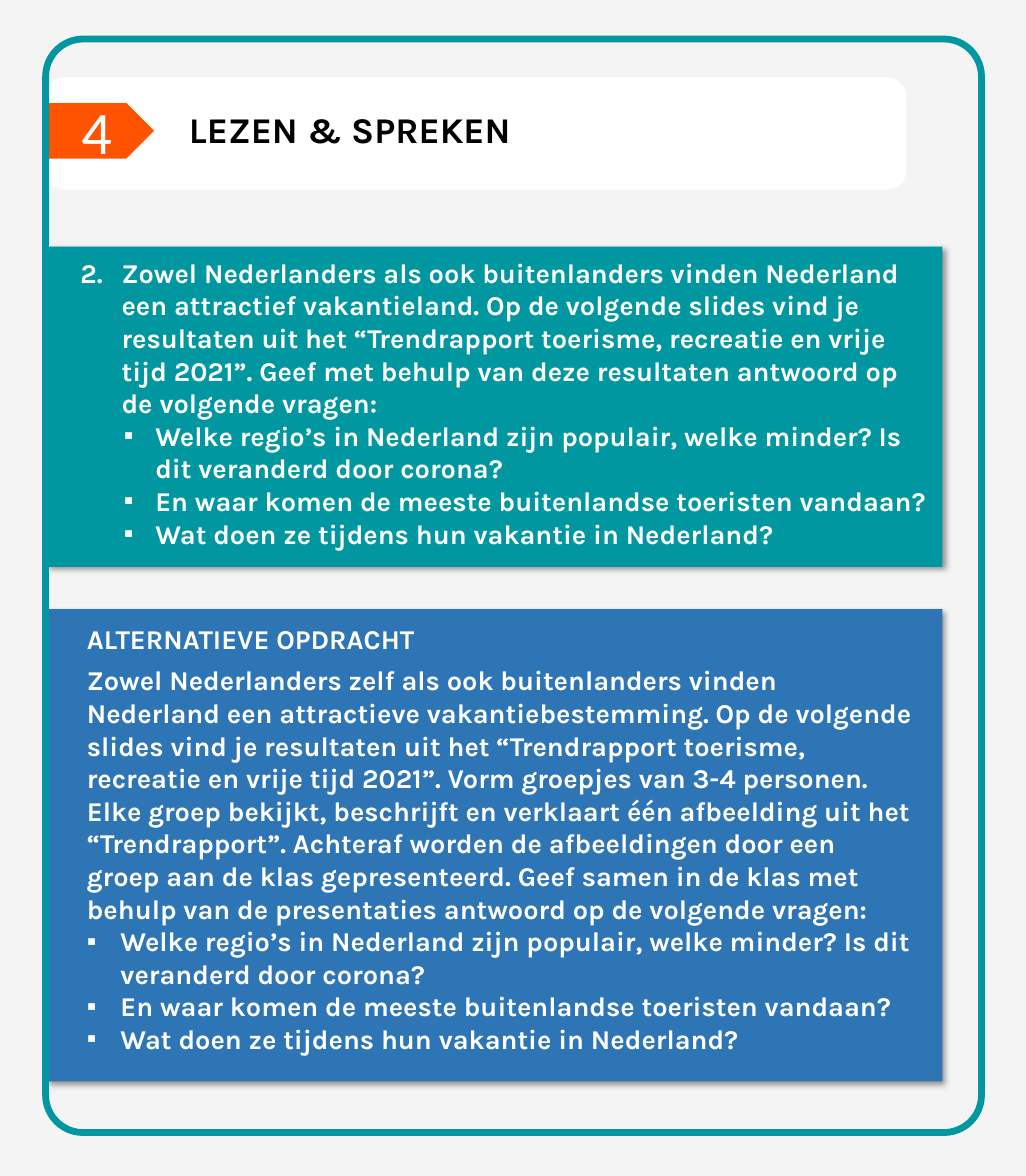
from lxml import etree
from pptx import Presentation
from pptx.dml.color import RGBColor
from pptx.enum.shapes import MSO_SHAPE
from pptx.enum.text import MSO_ANCHOR, MSO_AUTO_SIZE, PP_ALIGN
from pptx.oxml import parse_xml
from pptx.oxml.ns import nsdecls, qn
from pptx.util import Inches, Pt

RECTANGLE = MSO_SHAPE.RECTANGLE
ROUNDED = MSO_SHAPE.ROUNDED_RECTANGLE
PENTAGON = MSO_SHAPE.PENTAGON
TOP, MIDDLE = MSO_ANCHOR.TOP, MSO_ANCHOR.MIDDLE
NO_AUTOFIT = MSO_AUTO_SIZE.NONE
LEFT = PP_ALIGN.LEFT
TWO_CONTENT = 3

TEAL, BLUE, ORANGE = "0097A1", "2E75B6", "FF5300"
WHITE, BLACK, GREY = "FFFFFF", "000000", "F4F4F4"
HEADING = {"name": "Karla", "size": Pt(24), "bold": True}
BODY = {"name": "Karla", "size": Pt(18), "bold": True}
NUMBER = {"name": "Calibri", "size": Pt(40), "bold": False}

QUESTIONS = [
    "Welke regio’s in Nederland zijn populair, welke minder? Is dit veranderd door corona?",
    "En waar komen de meeste buitenlandse toeristen vandaan?",
    "Wat doen ze tijdens hun vakantie in Nederland?",
]
TASK = (
    "Zowel Nederlanders als ook buitenlanders vinden Nederland een attractief "
    "vakantieland. Op de volgende slides vind je resultaten uit het “Trendrapport "
    "toerisme, recreatie en vrije tijd 2021”. Geef met behulp van deze resultaten "
    "antwoord op de volgende vragen:"
)
ALTERNATIVE = (
    "Zowel Nederlanders zelf als ook buitenlanders vinden Nederland een attractieve "
    "vakantiebestemming. Op de volgende slides vind je resultaten uit het "
    "“Trendrapport toerisme, recreatie en vrije tijd 2021”. Vorm groepjes van 3-4 "
    "personen. Elke groep bekijkt, beschrijft en verklaart één afbeelding uit het "
    "“Trendrapport”. Achteraf worden de afbeeldingen door een groep aan de klas "
    "gepresenteerd. Geef samen in de klas met behulp van de presentaties antwoord "
    "op de volgende vragen:"
)


def color(value):
    return RGBColor.from_string(value)


def add_box(page, kind, area, fill=None, line=None, width=1):
    box = page.shapes.add_shape(kind, *map(Inches, area))
    box.shadow.inherit = False
    if fill:
        box.fill.solid()
        box.fill.fore_color.rgb = color(fill)
    else:
        box.fill.background()
    if line:
        box.line.color.rgb = color(line)
        box.line.width = Pt(width)
    else:
        box.line.fill.background()
    return box


def add_shadow(box):
    effects = box.element.spPr.find(qn("a:effectLst"))
    effects.append(parse_xml(
        f'<a:outerShdw {nsdecls("a")} blurRad="{Pt(4)}" dist="{Pt(3)}" dir="2700000" '
        'algn="tl" rotWithShape="0"><a:srgbClr val="000000"><a:alpha val="40000"/>'
        '</a:srgbClr></a:outerShdw>'))


def place(holder, area, anchor):
    """Move a placeholder to an area and bring it to the front."""
    holder.left, holder.top, holder.width, holder.height = map(Inches, area)
    frame = holder.text_frame
    settings = {"word_wrap": True, "auto_size": NO_AUTOFIT, "vertical_anchor": anchor}
    for name, value in settings.items():
        setattr(frame, name, value)
    holder.element.getparent().append(holder.element)
    return frame


def write(para, text, style, ink):
    para.alignment = LEFT
    span = para.add_run()
    span.text = text
    for name, value in style.items():
        setattr(span.font, name, value)
    span.font.color.rgb = color(ink)


def set_marker(para, tag, indent=0, hanging=0, **values):
    props = para._p.get_or_add_pPr()
    props.set("marL", str(Inches(indent)))
    props.set("indent", str(-Inches(hanging)))
    marker = etree.SubElement(props, qn(f"a:{tag}"))
    for name, value in values.items():
        marker.set(name, value)


def fill_list(frame, items):
    """Write (text, space before, marker) items as paragraphs."""
    for index, (text, space, marker) in enumerate(items):
        para = frame.paragraphs[0] if index == 0 else frame.add_paragraph()
        set_marker(para, **marker)
        para.space_before = Pt(space)
        write(para, text, BODY, WHITE)


def question_items(indent, hanging):
    marker = {"tag": "buChar", "indent": indent, "hanging": hanging, "char": "▪"}
    return [(question, 0, marker) for question in QUESTIONS]


def header(page, left, top, width, height):
    add_box(page, ROUNDED, (left, top, width, height), WHITE, WHITE)
    # Numbered arrow
    arrow = add_box(page, PENTAGON, (left, top + 0.23, 1, 0.51), ORANGE)
    frame = arrow.text_frame
    margins = {"margin_left": 0.33, "margin_right": 0, "margin_top": 0, "margin_bottom": 0}
    for name, value in margins.items():
        setattr(frame, name, Inches(value))
    frame.vertical_anchor = MIDDLE
    write(frame.paragraphs[0], "4", NUMBER, WHITE)
    # Title
    frame = place(page.shapes.title, (left + 1.22, top + 0.22, 6.21, 0.5), MIDDLE)
    write(frame.paragraphs[0], "LEZEN & SPREKEN", HEADING, BLACK)


def panel(page, area, fill, holder, text_area, items):
    left, top, width, height = area
    add_shadow(add_box(page, RECTANGLE, area, fill))
    dx, dy, text_width, text_height = text_area
    frame = place(holder, (left + dx, top + dy, text_width, text_height), TOP)
    fill_list(frame, items)


def build_page(deck):
    page = deck.slides.add_slide(deck.slide_layouts[TWO_CONTENT])
    page.background.fill.solid()
    page.background.fill.fore_color.rgb = color(GREY)
    task_holder, alternative_holder = page.placeholders[1], page.placeholders[2]

    header(page, 0.42, 0.72, 7.92, 1.02)

    # Main task
    number = {"tag": "buAutoNum", "indent": 0.38, "hanging": 0.38,
              "type": "arabicPeriod", "startAt": "2"}
    panel(page, (0.43, 2.27, 8.25, 2.95), TEAL, task_holder, (0.21, 0.04, 8.02, 2.83),
          [(TASK, 0, number)] + question_items(0.69, 0.29))

    # Alternative task
    plain = {"tag": "buNone"}
    panel(page, (0.43, 5.61, 8.25, 4.35), BLUE, alternative_holder, (0.27, 0.07, 7.81, 4.12),
          [("ALTERNATIEVE OPDRACHT", 0, plain), (ALTERNATIVE, 6, plain)]
          + question_items(0.31, 0.31))

    # Frame around the page
    border = add_box(page, ROUNDED, (0.42, 0.36, 8.62, 10.07), line=TEAL, width=4.5)
    border.adjustments[0] = 0.04


def main():
    deck = Presentation()
    deck.slide_width, deck.slide_height = Inches(9.45), Inches(10.83)
    build_page(deck)
    deck.save("out.pptx")


if __name__ == "__main__":
    main()
